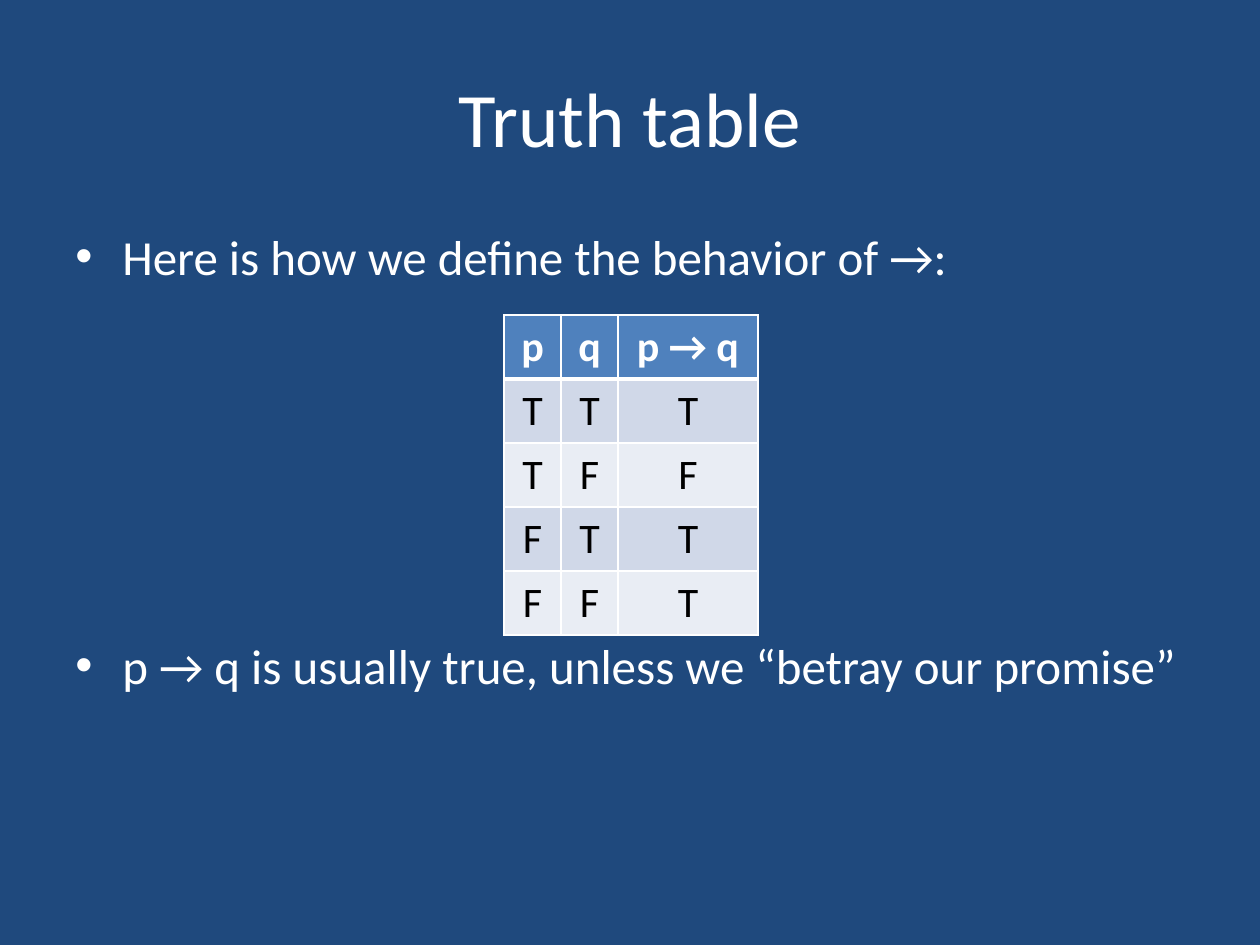
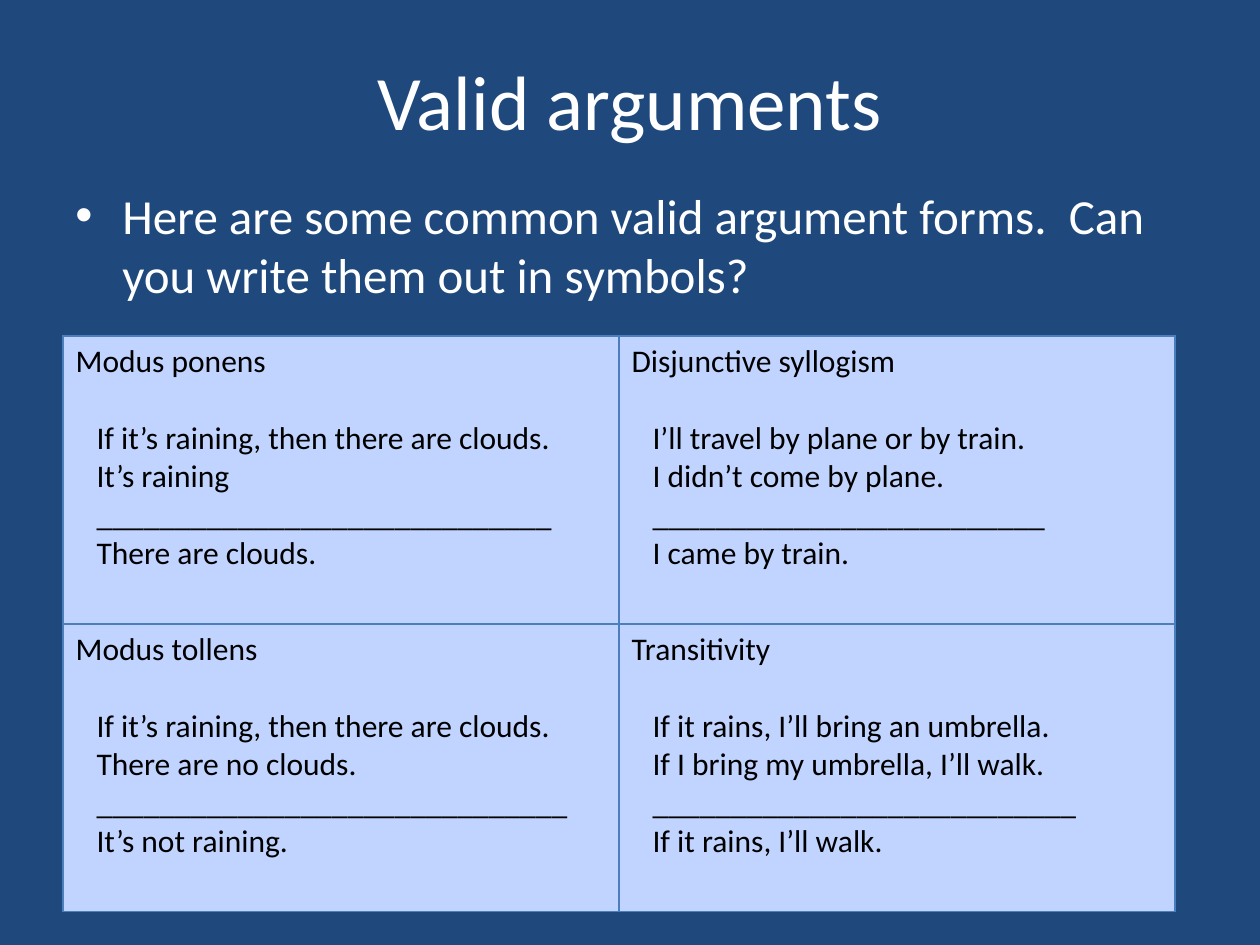
import pptx
import pptx.util
import pptx.dml.color
import pptx.enum.text
import pptx.oxml
import pptx.oxml.ns

COLORS = {
    "background": "1F497D", "light": "FFFFFF", "dark": "000000",
    "header": "4F81BD", "band_odd": "D0D8E8", "band_even": "E9EDF4",
    "argument": "C0D4FF", "argument_line": "4B7EBC",
}
FONT = "Calibri"
LEFT, WIDTH = 63, 1134
TITLE_HEIGHT, BODY_HEIGHT = 157, 624
BULLET_INDENT = 47

TRUTH = {
    "title": "Truth table", "title_top": 38, "body_top": 220,
    # each bullet: text, space before in points
    "bullets": [
        ("Here is how we define the behavior of →:", 5.6),
        ("p → q is usually true, unless we “betray our promise”", 200),
    ],
}
TRUTH_ROWS = ["p", "q", "p → q"], "TTT", "TFF", "FTT", "FFT"
TRUTH_PLACE = {"left": 504, "top": 315, "columns": [57, 57, 140], "row_height": 64}

ARGUMENTS = {
    "title": "Valid arguments", "title_top": 21, "body_top": 179,
    "bullets": [
        ("Here are some common valid argument forms.  Can you write them out in symbols?", 5.6),
    ],
}
# each form: name, premises, length of the rule, conclusion
ARGUMENT_ROWS = [
    [
        ("Modus ponens", ["If it’s raining, then there are clouds.", "It’s raining"],
         29, "There are clouds."),
        ("Disjunctive syllogism", ["I’ll travel by plane or by train.", "I didn’t come by plane."],
         25, "I came by train."),
    ],
    [
        ("Modus tollens", ["If it’s raining, then there are clouds.", "There are no clouds."],
         30, "It’s not raining."),
        ("Transitivity", ["If it rains, I’ll bring an umbrella.", "If I bring my umbrella, I’ll walk."],
         27, "If it rains, I’ll walk."),
    ],
]
ARGUMENT_PLACE = {"left": LEFT, "top": 336, "columns": [556, 556], "row_height": 288}
PREMISE_INDENT = 21
PREMISE_GAP = 22  # points, one line of 18 pt text


def px(length):
    return pptx.util.Emu(round(length * 914400 / 126))


def rgb(name):
    return pptx.dml.color.RGBColor.from_string(COLORS[name])


def format_paragraph(paragraph, size, color, bold=False, centered=False):
    align = pptx.enum.text.PP_ALIGN
    paragraph.alignment = align.CENTER if centered else align.LEFT
    for run in paragraph.runs:
        run.font.name = FONT
        run.font.size = pptx.util.Pt(size)
        run.font.bold = bold
        run.font.color.rgb = rgb(color)


def indent(paragraph, margin, first_line=0):
    properties = paragraph._p.get_or_add_pPr()
    properties.set("marL", str(px(margin)))
    properties.set("indent", str(px(first_line)))
    return properties


def add_text_box(slide, top, height):
    frame = slide.shapes.add_textbox(px(LEFT), px(top), px(WIDTH), px(height)).text_frame
    frame.word_wrap = True
    return frame


def add_slide(presentation, content):
    """Add a slide with background, title and bullets."""
    slide = presentation.slides.add_slide(presentation.slide_layouts[6])
    slide.background.fill.solid()
    slide.background.fill.fore_color.rgb = rgb("background")

    title = add_text_box(slide, content["title_top"], TITLE_HEIGHT)
    title.vertical_anchor = pptx.enum.text.MSO_ANCHOR.MIDDLE
    title.text = content["title"]
    format_paragraph(title.paragraphs[0], 44, "light", centered=True)

    body = add_text_box(slide, content["body_top"], BODY_HEIGHT)
    body.text = "\n".join(text for text, _ in content["bullets"])
    for paragraph, (_, space) in zip(body.paragraphs, content["bullets"]):
        format_paragraph(paragraph, 28, "light")
        paragraph.space_before = pptx.util.Pt(space)
        properties = indent(paragraph, BULLET_INDENT, -BULLET_INDENT)
        namespace = pptx.oxml.ns.nsdecls("a")
        properties.append(pptx.oxml.parse_xml(f'<a:buFont {namespace} typeface="Arial"/>'))
        properties.append(pptx.oxml.parse_xml(f'<a:buChar {namespace} char="•"/>'))
    return slide


def add_table(slide, place, row_count):
    columns, row_height = place["columns"], place["row_height"]
    table = slide.shapes.add_table(
        row_count, len(columns), px(place["left"]), px(place["top"]),
        px(sum(columns)), px(row_height * row_count)).table
    for column, width in zip(table.columns, columns):
        column.width = px(width)
    for row in table.rows:
        row.height = px(row_height)
    return table


def style_cell(cell, fill, line, **widths):
    """Fill a cell and draw its borders; widths are points for L, R, T, B."""
    properties = cell._tc.get_or_add_tcPr()
    for side, width in widths.items():
        properties.append(pptx.oxml.parse_xml(
            f'<a:ln{side} {pptx.oxml.ns.nsdecls("a")} w="{pptx.util.Pt(width)}">'
            f'<a:solidFill><a:srgbClr val="{COLORS[line]}"/></a:solidFill></a:ln{side}>'))
    cell.fill.solid()
    cell.fill.fore_color.rgb = rgb(fill)


def add_truth_table(slide):
    table = add_table(slide, TRUTH_PLACE, len(TRUTH_ROWS))
    for row, values in enumerate(TRUTH_ROWS):
        header = row == 0
        fill = "header" if header else "band_odd" if row % 2 else "band_even"
        for column, value in enumerate(values):
            cell = table.cell(row, column)
            cell.text = value
            format_paragraph(cell.text_frame.paragraphs[0], 24,
                             "light" if header else "dark", header, centered=True)
            style_cell(cell, fill, "light", L=1, R=1,
                       T=3 if row == 1 else 1, B=3 if header else 1)


def add_argument_table(slide):
    table = add_table(slide, ARGUMENT_PLACE, len(ARGUMENT_ROWS))
    for row, forms in enumerate(ARGUMENT_ROWS):
        for column, (name, premises, rule_length, conclusion) in enumerate(forms):
            cell = table.cell(row, column)
            cell.text = "\n".join([name, *premises, "_" * rule_length, conclusion])
            paragraphs = cell.text_frame.paragraphs
            for paragraph in paragraphs:
                format_paragraph(paragraph, 18, "dark")
            for paragraph in paragraphs[1:]:
                indent(paragraph, PREMISE_INDENT)
            paragraphs[1].space_before = pptx.util.Pt(PREMISE_GAP)
            style_cell(cell, "argument", "argument_line", L=0.75, R=0.75, T=0.75, B=0.75)


def main():
    presentation = pptx.Presentation()
    presentation.slide_width, presentation.slide_height = px(1260), px(945)
    add_truth_table(add_slide(presentation, TRUTH))
    add_argument_table(add_slide(presentation, ARGUMENTS))
    presentation.save("out.pptx")


if __name__ == "__main__":
    main()
